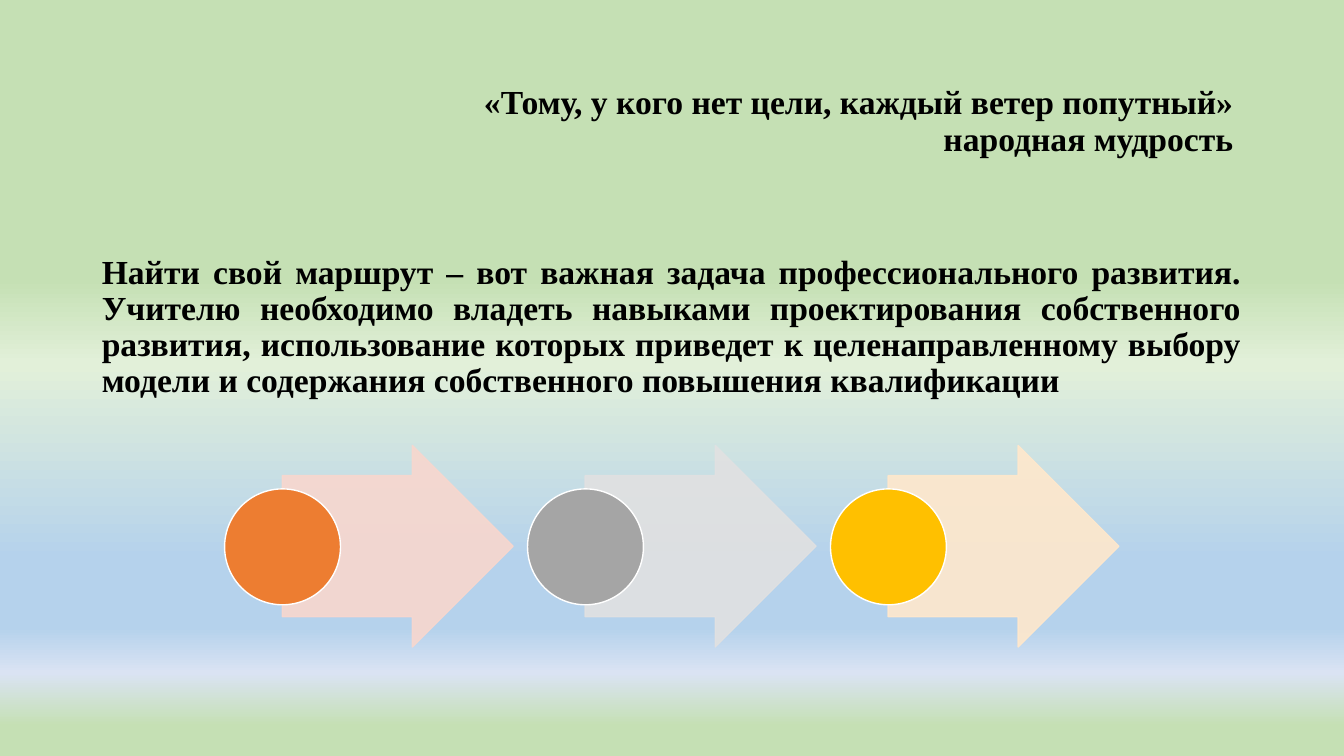
from dataclasses import dataclass

from lxml import etree
from pptx import Presentation
from pptx.dml.color import RGBColor
from pptx.enum.shapes import MSO_SHAPE
from pptx.enum.text import MSO_ANCHOR, MSO_AUTO_SIZE, PP_ALIGN
from pptx.oxml.ns import qn
from pptx.util import Pt

ARROW, OVAL = MSO_SHAPE.RIGHT_ARROW, MSO_SHAPE.OVAL
RIGHT, JUSTIFY = PP_ALIGN.RIGHT, PP_ALIGN.JUSTIFY
TOP, BOTTOM = MSO_ANCHOR.TOP, MSO_ANCHOR.BOTTOM
NO_FIT = MSO_AUTO_SIZE.NONE

BLACK = RGBColor(0x00, 0x00, 0x00)
WHITE = RGBColor(0xFF, 0xFF, 0xFF)
GREEN = RGBColor(0xC5, 0xE0, 0xB4)
MINT = RGBColor(0xE2, 0xF0, 0xD9)
BLUE = RGBColor(0xB5, 0xD2, 0xEC)
PALE = RGBColor(0xDA, 0xE3, 0xF3)
ORANGE = RGBColor(0xED, 0x7D, 0x31)
PEACH = RGBColor(0xF8, 0xD7, 0xCE)
GRAY = RGBColor(0xA5, 0xA5, 0xA5)
SILVER = RGBColor(0xE1, 0xE1, 0xE1)
GOLD = RGBColor(0xFF, 0xC0, 0x00)
CREAM = RGBColor(0xFF, 0xE8, 0xCC)

FONT = "Times New Roman"
SKY = [(37, GREEN), (48, MINT), (74, BLUE), (83, BLUE), (89, PALE), (96, GREEN)]
QUOTE = "«Тому, у кого нет цели, каждый ветер попутный»\vнародная мудрость"
TASK = (
    "Найти свой маршрут – вот важная задача профессионального развития. "
    "Учителю необходимо владеть навыками проектирования собственного развития, "
    "использование которых приведет к целенаправленному выбору модели "
    "и содержания собственного повышения квалификации"
)


@dataclass
class Box:
    left: float
    top: float
    width: float
    height: float


@dataclass
class Step:
    dot: RGBColor
    arrow: RGBColor


STEPS = [Step(ORANGE, PEACH), Step(GRAY, SILVER), Step(GOLD, CREAM)]
PITCH = 216.4


def paint_sky(slide) -> None:
    fill = slide.background.fill
    fill.gradient()
    fill.gradient_angle = 270
    stops = next(slide.element.iter(qn("a:gsLst")))
    for old in list(stops):
        stops.remove(old)
    for place, color in SKY:
        stop = etree.SubElement(stops, qn("a:gs"), pos=str(place * 1000))
        etree.SubElement(stop, qn("a:srgbClr"), val=str(color))


def set_text(shape, box: Box, text: str, align, anchor):
    shape.left, shape.top = Pt(box.left), Pt(box.top)
    shape.width, shape.height = Pt(box.width), Pt(box.height)
    frame = shape.text_frame
    frame.auto_size = NO_FIT
    frame.word_wrap = True
    frame.vertical_anchor = anchor
    para = frame.paragraphs[0]
    para.text = text
    para.alignment = align
    para.line_spacing = 0.9
    for run in para.runs:
        font = run.font
        font.name, font.size, font.bold = FONT, Pt(24), True
        font.color.rgb = BLACK
    return para


def add_shape(slide, kind, box: Box, fill: RGBColor, line: RGBColor):
    shape = slide.shapes.add_shape(
        kind, Pt(box.left), Pt(box.top), Pt(box.width), Pt(box.height))
    shape.shadow.inherit = False
    shape.fill.solid()
    shape.fill.fore_color.rgb = fill
    shape.line.color.rgb = line
    shape.line.width = Pt(1)
    return shape


def add_step(slide, step: Step, shift: float) -> None:
    arrow = add_shape(slide, ARROW, Box(201.6 + shift, 318.2, 164.9, 144),
                      step.arrow, step.arrow)
    arrow.adjustments[0], arrow.adjustments[1] = 0.7, 0.5
    # Fill and outline are slightly see-through
    for color in arrow.element.iter(qn("a:srgbClr")):
        etree.SubElement(color, qn("a:alpha"), val="90000")
    add_shape(slide, OVAL, Box(160.4 + shift, 349.2, 82.8, 82.8), step.dot, WHITE)


def main() -> None:
    deck = Presentation()
    deck.slide_width, deck.slide_height = Pt(960), Pt(540)
    slide = deck.slides.add_slide(deck.slide_layouts[1])
    paint_sky(slide)

    # Quote and main statement
    title, body = slide.placeholders
    set_text(title, Box(60, 39, 828, 77.8), QUOTE, RIGHT, BOTTOM)
    para = set_text(body, Box(65.5, 178.6, 828, 301), TASK, JUSTIFY, TOP)
    para.space_before = Pt(10)
    props = para._p.get_or_add_pPr()
    props.set("marL", "0")
    props.set("indent", "0")
    etree.SubElement(props, qn("a:buNone"))

    # Route of three steps
    for index, step in enumerate(STEPS):
        add_step(slide, step, index * PITCH)

    deck.save("out.pptx")


if __name__ == "__main__":
    main()
